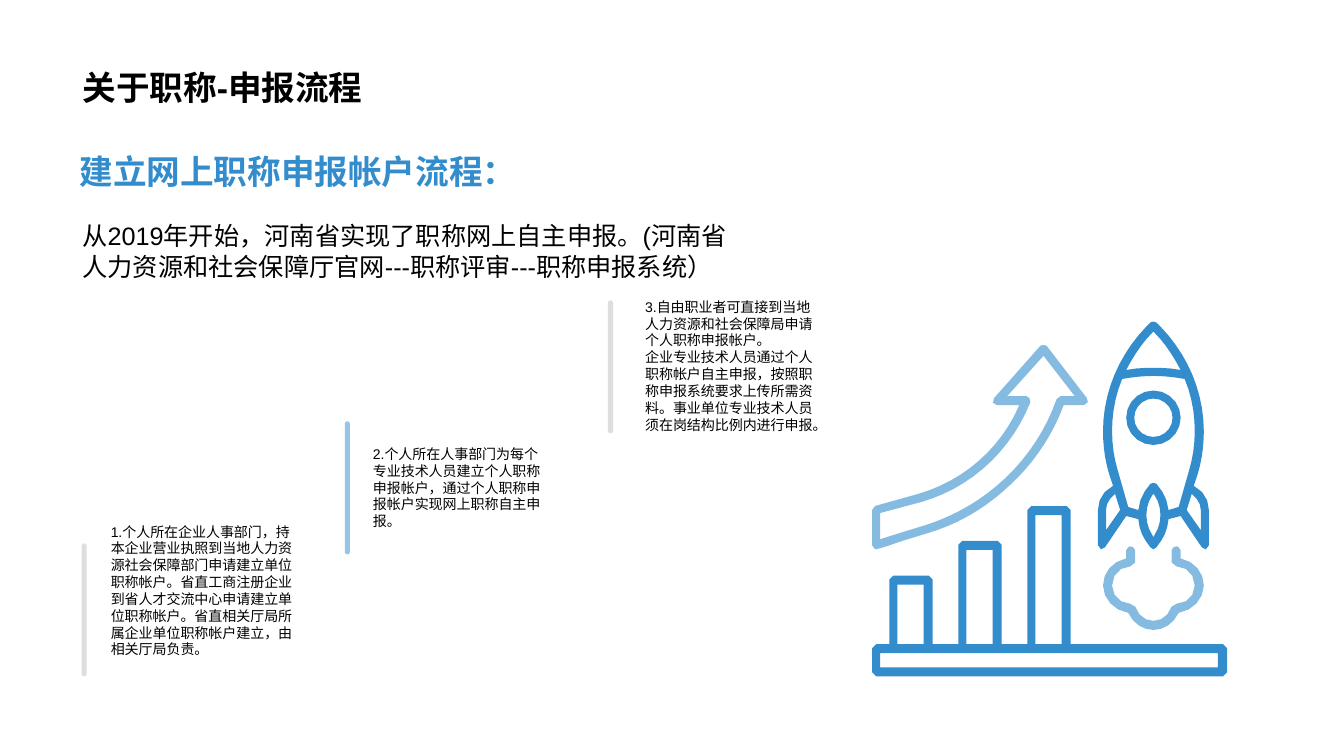
from math import cos, dist, pi, sin

from lxml.etree import SubElement
from pptx import Presentation
from pptx.dml.color import RGBColor
from pptx.enum.shapes import MSO_SHAPE
from pptx.enum.text import MSO_ANCHOR, MSO_AUTO_SIZE
from pptx.oxml.ns import qn
from pptx.util import Inches, Pt

BLUE, PALE_BLUE, GREY, BLACK = "338DCD", "85BBE1", "BFBFBF", "000000"
AXIS = 11.44  # centre line of the rocket and its smoke


def rgb(color):
    return RGBColor.from_string(color)


def trace(steps):
    """Turn (x, y) points and six-number Bezier steps into plain points."""
    points = []
    for step in steps:
        if len(step) == 2:
            points.append(step)
            continue
        ends = [points[-1], step[:2], step[2:4], step[4:]]
        count = 1 + round(dist(ends[0], ends[3]) / 0.12)
        for i in range(1, count + 1):
            t = i / count
            weights = ((1 - t) ** 3, 3 * t * (1 - t) ** 2,
                       3 * t * t * (1 - t), t ** 3)
            points.append(tuple(sum(w * end[axis] for w, end in zip(weights, ends))
                                for axis in (0, 1)))
    return points


def mirror(points):
    return [(2 * AXIS - x, y) for x, y in reversed(points)]


def symmetric(steps):
    """Complete a right half, which starts and ends on the axis."""
    half = trace(steps)
    return half + mirror(half[1:-1])


def box(left, top, right, bottom):
    return [(left, top), (right, top), (right, bottom), (left, bottom)]


def circle(x, y, radius, count=20):
    angles = [2 * pi * i / count for i in range(count)]
    return [(x + radius * cos(a), y + radius * sin(a)) for a in angles]


class SlideBuilder:
    def __init__(self, slide, font="Arial"):
        self.shapes = slide.shapes
        self.font = font

    def text(self, at, paragraphs, size, color=BLACK, bold=False, wrap=True,
             bottom=False, spacing=None):
        frame = self.shapes.add_textbox(*map(Inches, at)).text_frame
        frame.word_wrap = wrap
        frame.auto_size = MSO_AUTO_SIZE.NONE
        frame.vertical_anchor = MSO_ANCHOR.BOTTOM if bottom else MSO_ANCHOR.TOP
        for i, content in enumerate(paragraphs):
            paragraph = frame.add_paragraph() if i else frame.paragraphs[0]
            if spacing:
                paragraph.line_spacing = spacing
            run = paragraph.add_run()
            run.text = content
            run.font.name = self.font
            run.font.size = Pt(size)
            run.font.bold = bold
            run.font.color.rgb = rgb(color)

    def paint(self, shape, color):
        shape.shadow.inherit = False
        shape.fill.solid()
        shape.fill.fore_color.rgb = rgb(color)
        shape.line.fill.background()

    def step_bar(self, left, top, color):
        """Add a slim half-transparent bar with round ends."""
        bar = self.shapes.add_shape(MSO_SHAPE.ROUNDED_RECTANGLE, Inches(left),
                                    Inches(top), Inches(0.05), Inches(1.32))
        bar.adjustments[0] = 0.5
        self.paint(bar, color)
        tint = next(bar.element.spPr.iter(qn("a:srgbClr")))
        SubElement(tint, qn("a:alpha")).set("val", "50000")

    def outline(self, contours, color):
        """Fill the first contour and cut the later ones out of it."""
        builder = None
        for contour in contours:
            points = [(Inches(x), Inches(y)) for x, y in contour]
            if builder is None:
                builder = self.shapes.build_freeform(*points[0], scale=1.0)
            else:
                builder.move_to(*points[0])
            builder.add_line_segments(points[1:], close=True)
        self.paint(builder.convert_to_shape(), color)


def draw_growth_arrow(page):
    outer = trace([
        (10.78, 3.95), (10.38, 3.43), (10.37, 3.42, 10.33, 3.42, 10.32, 3.43),
        (9.86, 3.95), (9.83, 3.98, 9.85, 4.02, 9.89, 4.02), (10.11, 4.02),
        (9.92, 4.46, 9.55, 4.77, 9.11, 4.9), (8.68, 5.02), (8.65, 5.06), (8.65, 5.41),
        (8.68, 5.45), (8.7, 5.45, 8.77, 5.43, 8.94, 5.37),
        (9.2, 5.29), (9.51, 5.2, 9.79, 5.03, 10.02, 4.81),
        (10.25, 4.6, 10.44, 4.32, 10.55, 4.02), (10.75, 4.02), (10.79, 3.99)])
    inner = trace([
        (10.66, 3.93), (10.52, 3.93), (10.48, 3.96),
        (10.27, 4.56, 9.78, 5.02, 9.18, 5.21), (8.92, 5.29), (8.73, 5.35),
        (8.73, 5.09), (9.14, 4.98), (9.63, 4.84, 10.03, 4.47, 10.22, 3.99),
        (10.21, 3.95), (10.18, 3.93), (9.99, 3.93), (10.35, 3.53)])
    page.outline([outer, inner], PALE_BLUE)


def draw_bar_chart_icon(page):
    floor, bars = 6.39, [(8.82 + 0.685 * i, 5.71 - 0.345 * i) for i in range(3)]
    silhouette = [(8.69, floor)]
    for left, top in bars:
        silhouette += [(left, floor), (left, top + 0.04), (left + 0.04, top),
                       (left + 0.39, top), (left + 0.43, top + 0.04), (left + 0.43, floor)]
    silhouette += [(12.13, floor), (12.17, 6.43), (12.17, 6.67), (12.13, 6.71),
                   (8.69, 6.71), (8.65, 6.67), (8.65, 6.43)]
    windows = [box(left + 0.08, top + 0.09, left + 0.34, floor) for left, top in bars]
    page.outline([silhouette, *windows, box(8.73, 6.48, 12.08, 6.62)], BLUE)


def draw_rocket(page):
    hull = symmetric([
        (11.44, 3.19), (11.47, 3.2), (11.51, 3.24),
        (11.78, 3.52, 11.94, 3.89, 11.94, 4.28), (11.94, 4.42, 11.92, 4.57, 11.88, 4.7),
        (11.84, 4.82), (11.94, 4.87, 11.99, 4.96, 11.99, 5.06), (11.99, 5.41),
        (11.96, 5.45), (11.92, 5.43), (11.71, 5.12), (11.59, 5.15),
        (11.58, 5.24, 11.56, 5.3, 11.52, 5.36), (11.47, 5.43), (11.44, 5.45)])
    nose = symmetric([
        (11.44, 3.29), (11.45, 3.3), (11.55, 3.4, 11.63, 3.52, 11.71, 3.67),
        (11.6, 3.65, 11.52, 3.65, 11.44, 3.65)])
    cabin = symmetric([
        (11.44, 3.73), (11.54, 3.73, 11.64, 3.74, 11.75, 3.76),
        (11.82, 3.93, 11.85, 4.1, 11.85, 4.28), (11.85, 4.42, 11.83, 4.55, 11.79, 4.68),
        (11.69, 5.03), (11.59, 5.06), (11.58, 4.95, 11.53, 4.87, 11.47, 4.8), (11.44, 4.79)])
    nozzle = symmetric([
        (11.44, 4.9), (11.45, 4.91), (11.49, 4.97, 11.51, 5.04, 11.51, 5.11),
        (11.51, 5.18, 11.49, 5.25, 11.45, 5.31), (11.44, 5.33)])
    fin = trace([(11.82, 4.9), (11.88, 4.95, 11.91, 5, 11.91, 5.06),
                 (11.91, 5.26), (11.77, 5.06)])
    page.outline([circle(AXIS, 4.145, radius) for radius in (0.27, 0.19)], BLUE)
    page.outline([hull, nose, cabin, nozzle, fin, mirror(fin)], BLUE)


def draw_smoke(page):
    page.outline([symmetric([
        (11.44, 6.25), (11.54, 6.25, 11.64, 6.19, 11.69, 6.08),
        (11.83, 6.06, 11.94, 5.94, 11.94, 5.81), (11.94, 5.68, 11.85, 5.57, 11.71, 5.54),
        (11.71, 5.46), (11.69, 5.43), (11.67, 5.42), (11.64, 5.43), (11.62, 5.46),
        (11.62, 5.58), (11.67, 5.62), (11.77, 5.62, 11.85, 5.7, 11.85, 5.81),
        (11.85, 5.91, 11.77, 5.99, 11.67, 5.99), (11.62, 6.02),
        (11.59, 6.11, 11.52, 6.16, 11.44, 6.16)])], PALE_BLUE)


STEPS = [  # bar left, bar top, bar colour, text box, paragraphs
    (3.42, 4.18, BLUE, (3.6, 4.37, 1.95, 0.94), [
        "2.个人所在人事部门为每个专业技术人员建立个人职称申报帐户，通过个人职称申报帐户实现网上职称自主申报。"]),
    (6.03, 2.98, GREY, (6.3, 2.91, 1.95, 1.45), [
        "3.自由职业者可直接到当地人力资源和社会保障局申请个人职称申报帐户。",
        "企业专业技术人员通过个人职称帐户自主申报，按照职称申报系统要求上传所需资料。"
        "事业单位专业技术人员须在岗结构比例内进行申报。"]),
    (0.81, 5.39, GREY, (1, 5.14, 2.01, 1.45), [
        "1.个人所在企业人事部门，持本企业营业执照到当地人力资源社会保障部门申请建立单位职称帐户。"
        "省直工商注册企业到省人才交流中心申请建立单位职称帐户。"
        "省直相关厅局所属企业单位职称帐户建立，由相关厅局负责。"]),
]


def main():
    deck = Presentation()
    deck.slide_width, deck.slide_height = Inches(13.33), Inches(7.5)
    page = SlideBuilder(deck.slides.add_slide(deck.slide_layouts[6]))
    page.text((0.72, 0, 11.88, 1.12), ["关于职称-申报流程"], 24, bold=True,
              bottom=True, spacing=0.9)
    page.text((0.69, 1.4, 5.39, 0.55), ["建立网上职称申报帐户流程："], 24, BLUE,
              bold=True, wrap=False, bottom=True)
    for left, top, color, text_at, paragraphs in STEPS:
        page.step_bar(left, top, color)
        page.text(text_at, paragraphs, 10)
    for draw in (draw_growth_arrow, draw_bar_chart_icon, draw_rocket, draw_smoke):
        draw(page)
    page.text((0.72, 2.14, 6.67, 0.71), [
        "从2019年开始，河南省实现了职称网上自主申报。"
        "(河南省人力资源和社会保障厅官网---职称评审---职称申报系统）"], 18)
    deck.save("out.pptx")


if __name__ == "__main__":
    main()
